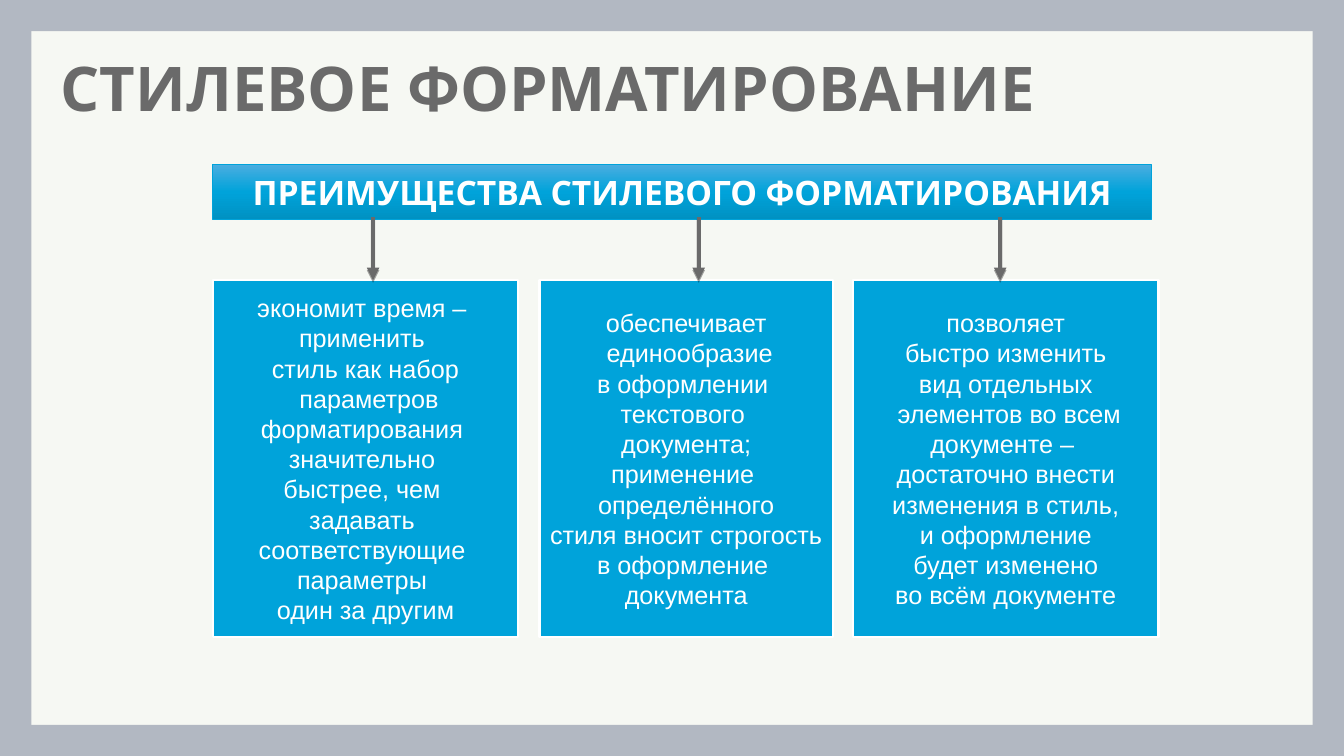
"""Build a slide on the benefits of style formatting."""
import copy
import dataclasses

import lxml.etree
import pptx
import pptx.dml.color
import pptx.enum.shapes
import pptx.enum.text
import pptx.oxml.ns
import pptx.util


@dataclasses.dataclass(frozen=True)
class Theme:
    """Hold the colours, fonts and type sizes."""
    paper: str = "F6F8F3"
    frame: str = "B2B8C2"
    ink: str = "6A6A6A"
    white: str = "FFFFFF"
    blue: str = "00A3DA"
    grade: tuple = ("4BADE0", "00A3DA", "0091C2")
    head: str = "Karla"
    body: str = "Arial"
    big: int = 44
    mid: int = 24
    small: int = 18


THEME = Theme()
WIDE = pptx.util.Inches(13.33)
HIGH = pptx.util.Inches(7.5)
ALIGN = pptx.enum.text.PP_ALIGN
BENEFITS = [
    (15.83, 22.73, 27.76, [
        "экономит время – ", "применить ", "стиль как набор",
        " параметров", "форматирования ", "значительно ",
        "быстрее, чем ", "задавать ", "соответствующие ",
        "параметры ", "один за другим"]),
    (40.14, 21.83, 51.99, [
        "обеспечивает", " единообразие", "в оформлении ",
        "текстового ", "документа;", "применение ", "определённого",
        "стиля вносит строгость", "в оформление ", "документа"]),
    (63.47, 22.73, 74.42, [
        "позволяет", "быстро изменить", "вид отдельных",
        " элементов во всем", "документе – ", "достаточно внести",
        "изменения в стиль,", "и оформление", "будет изменено",
        "во всём документе"]),
]


def rgb(code):
    """Turn a hex code into a colour."""
    return pptx.dml.color.RGBColor.from_string(code)


def across(share):
    """Turn a percentage of the slide's width into a length."""
    return round(WIDE * share / 100)


def down(share):
    """Turn a percentage of the slide's height into a length."""
    return round(HIGH * share / 100)


def place(shape, left, top, width, height):
    """Put a shape at shares of the slide's size."""
    shape.left, shape.top = across(left), down(top)
    shape.width, shape.height = across(width), down(height)


def write(shape, text, font, size, color, bold=False, align=ALIGN.CENTER):
    """Fill a shape with text in one format."""
    frame = shape.text_frame
    frame.text = text
    frame.vertical_anchor = pptx.enum.text.MSO_ANCHOR.MIDDLE
    for para in frame.paragraphs:
        para.alignment = align
        for run in para.runs:
            run.font.name, run.font.size = font, pptx.util.Pt(size)
            run.font.bold, run.font.color.rgb = bold, rgb(color)


def add_box(slide, area, fill, line=None, weight=0):
    """Add a flat rectangle, with an outline if one is named."""
    kind = pptx.enum.shapes.MSO_SHAPE.RECTANGLE
    box = slide.shapes.add_shape(kind, 0, 0, 0, 0)
    place(box, *area)
    box.shadow.inherit = False
    box.fill.solid()
    box.fill.fore_color.rgb = rgb(fill)
    if line:
        box.line.color.rgb = rgb(line)
        box.line.width = pptx.util.Pt(weight)
    else:
        box.line.fill.background()
    box.text_frame.word_wrap = False
    return box


def shade(box, colors):
    """Give a box a downward gradient of three colours."""
    box.fill.gradient()
    box.fill.gradient_angle = 270
    first = box._element.spPr.find(".//" + pptx.oxml.ns.qn("a:gs"))
    first.addnext(copy.deepcopy(first))
    for stop, color, point in zip(box.fill.gradient_stops, colors, (0, 0.5, 1)):
        stop.color.rgb = rgb(color)
        stop.position = point


def add_child(parent, tag, **values):
    """Append one drawing element to another."""
    return lxml.etree.SubElement(parent, pptx.oxml.ns.qn(tag), **values)


def add_arrow(slide, x, top, base):
    """Add an arrow that points down, with a soft shadow."""
    kind = pptx.enum.shapes.MSO_CONNECTOR.STRAIGHT
    arrow = slide.shapes.add_connector(
        kind, across(x), down(base), across(x), down(top))
    arrow.line.color.rgb = rgb(THEME.ink)
    arrow.line.width = pptx.util.Pt(3)
    props = arrow._element.spPr
    add_child(props.find(pptx.oxml.ns.qn("a:ln")), "a:headEnd", type="triangle")
    cast = add_child(add_child(props, "a:effectLst"), "a:outerShdw",
                     blurRad="0", dist="22860", dir="5400000", rotWithShape="0")
    add_child(add_child(cast, "a:srgbClr", val="000000"), "a:alpha", val="35000")


def add_title(slide, text):
    """Place and format the slide's title."""
    title = slide.shapes.title
    place(title, 3.75, 5.87, 89.12, 12.4)
    write(title, text, THEME.head, THEME.big, THEME.ink, True, ALIGN.LEFT)
    title.text_frame.paragraphs[0].line_spacing = 0.9


def add_frame(slide, side=2.33, edge=4.13):
    """Add a band along each edge of the slide."""
    for area in [(0, 0, 100, edge), (0, 100 - edge, 100, edge),
                 (0, 0, side, 100), (100 - side, 0, side, 100)]:
        add_box(slide, area, THEME.frame)


def main():
    """Build and save the slide."""
    deck = pptx.Presentation()
    deck.slide_width, deck.slide_height = WIDE, HIGH
    slide = deck.slides.add_slide(deck.slide_layouts.get_by_name("Title Only"))
    slide.background.fill.solid()
    slide.background.fill.fore_color.rgb = rgb(THEME.paper)
    add_frame(slide)
    add_title(slide, "СТИЛЕВОЕ ФОРМАТИРОВАНИЕ")
    for left, width, _, lines in BENEFITS:
        area = (left, 37.07, width, 47.2)
        box = add_box(slide, area, THEME.blue, THEME.white, 1.5)
        write(box, "\n".join(lines), THEME.body, THEME.small, THEME.white)
    area = (15.83, 21.73, 69.84, 7.33)
    banner = add_box(slide, area, THEME.blue, THEME.blue, 0.5)
    shade(banner, THEME.grade)
    write(banner, "ПРЕИМУЩЕСТВА СТИЛЕВОГО ФОРМАТИРОВАНИЯ",
          THEME.head, THEME.mid, THEME.white, True)
    for _, _, x, _ in BENEFITS:
        add_arrow(slide, x, 28.67, 37.07)
    deck.save("out.pptx")


if __name__ == "__main__":
    main()
